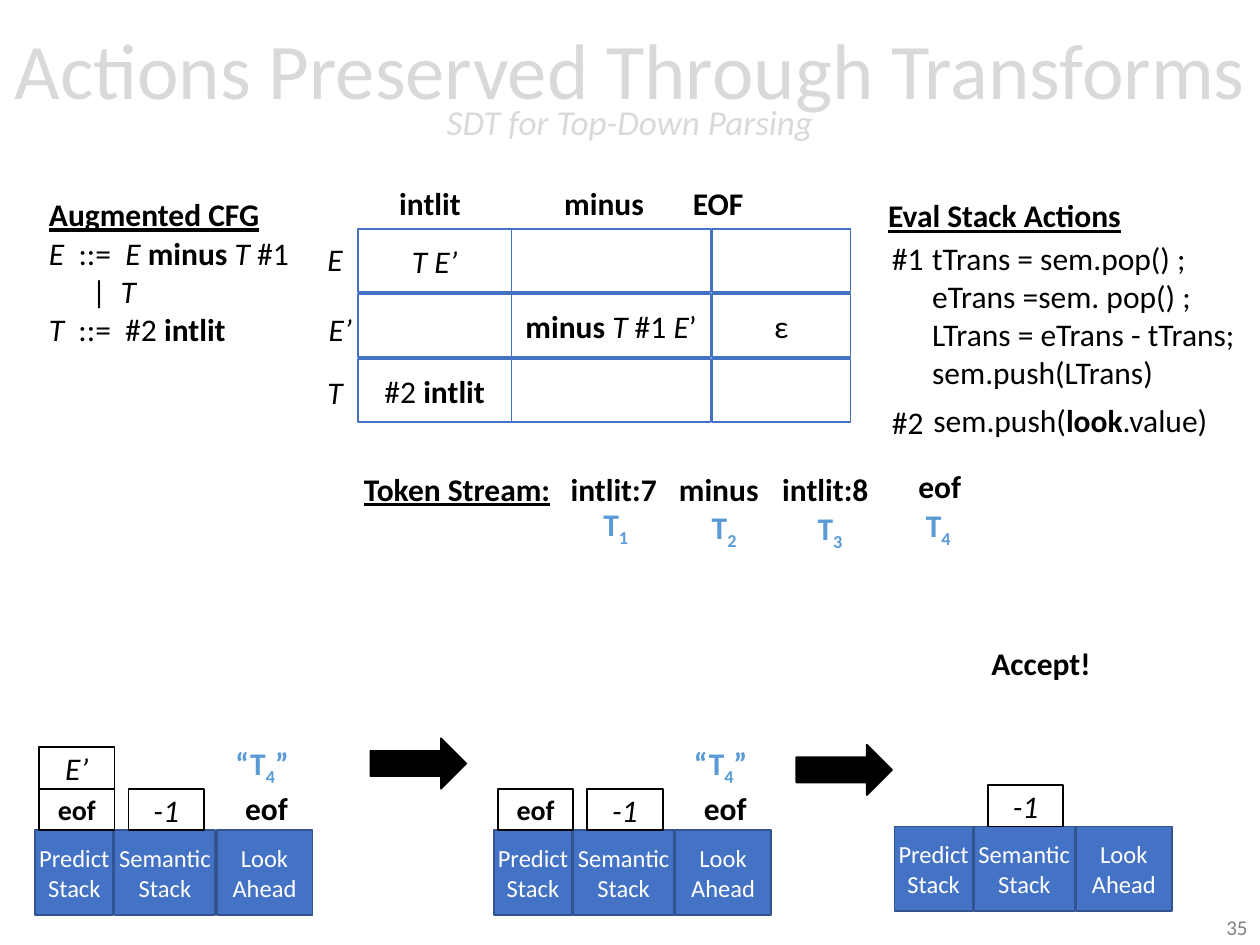
from pptx import Presentation
from pptx.dml.color import RGBColor
from pptx.enum import shapes, text
from pptx.util import Inches, Pt

THEME = {
    "font": "Calibri", "body": 18, "title": 45, "subtitle": 20,
    "label": 14, "small": 16, "number": 12,
    "black": "000000", "white": "FFFFFF", "muted": "D9D9D9", "gray": "808080",
    "token": "5B9BD5", "blue": "4472C4", "edge": "325491",
}

# Content: a line is a list of (text, style) runs; b bold, i italic, u underline, s subscript
TITLE = ("Actions Preserved Through Transforms", "SDT for Top-Down Parsing")
CFG = [
    [("E  ", "i"), ("::=  ", ""), ("E ", "i"), ("minus", "b"), (" T ", "i"), ("#1", "")],
    [("|  ", ""), ("T", "i")],
    [("T", "i"), ("  ::=  #2 ", ""), ("intlit", "b")],
]
COLUMNS = [("intlit", 3.07, 0.69), ("minus", 4.38, 0.84), ("EOF", 5.4, 0.61)]
ROWS = [("E", 2.5, 1.86, 0.32), ("E’", 2.51, 2.41, 0.39), ("T", 2.5, 2.91, 0.32)]
CELLS = [
    [[("T E’", "i")], None, None],
    [None, [("minus ", "b"), ("T", "i"), (" #1 ", ""), ("E", "i"), ("’", "")], [("ε", "")]],
    [[("#2 ", ""), ("intlit", "b")], None, None],
]
ACTIONS = ["tTrans = sem.pop() ;", "eTrans =sem. pop() ;",
           "LTrans = eTrans - tTrans;", "sem.push(LTrans)"]
HEADINGS = [("Augmented CFG", 0.29, 1.5, 1.88), ("Eval Stack Actions", 6.95, 1.51, 2.07),
            ("Token Stream:", 2.79, 3.68, 1.69)]
# token, left, top, width, label left, label top
TOKENS = [("intlit:7", 4.43, 3.68, 0.89, 4.69, 3.96), ("minus", 5.29, 3.68, 0.84, 5.55, 3.98),
          ("intlit:8", 6.11, 3.68, 0.89, 6.39, 3.99), ("eof", 7.19, 3.66, 0.54, 7.25, 3.97)]
# left, top of the labels, predict stack from the bottom up, has lookahead
STATES = [(0.28, 6.59, ["eof", "E’"], True), (3.92, 6.59, ["eof"], True),
          (7.1, 6.56, [], False)]
# label, offset from the left, width
STACKS = [("Predict\vStack", 0, 0.62), ("Semantic\vStack", 0.63, 0.8), ("Look\vAhead", 1.44, 0.76)]
ARROWS = [(2.94, 5.86), (6.32, 5.91)]

COL_X, COL_W = [2.84, 4.06, 5.65], [1.22, 1.58, 1.1]
ROW_Y, ROW_STEP, ROW_H = 1.82, 0.515, 0.5
SLOT_W, SLOT_H, STACK_H, TEXT_H = 0.6, 0.33, 0.67, 0.4
CENTER = text.PP_ALIGN.CENTER


def rgb(name):
    return RGBColor.from_string(THEME[name])


def style_font(font, size, color):
    font.name, font.size = THEME["font"], Pt(THEME[size])
    font.color.rgb = rgb(color)


def write(tf, lines, size="body", color="black", align=None):
    for n, line in enumerate(lines):
        p = tf.paragraphs[0] if n == 0 else tf.add_paragraph()
        p.alignment = align
        style_font(p.font, size, color)
        for words, style in line:
            for k, part in enumerate(words.split("\v")):
                if k:
                    p.add_line_break()
                r = p.add_run()
                r.text = part
                style_font(r.font, size, color)
                r.font.bold, r.font.italic = "b" in style, "i" in style
                if "u" in style:
                    r.font.underline = True
                if "s" in style:
                    r._r.get_or_add_rPr().set("baseline", "-25000")


def add_text(s, x, y, w, lines, h=TEXT_H, wrap=False, **look):
    tf = s.shapes.add_textbox(Inches(x), Inches(y), Inches(w), Inches(h)).text_frame
    tf.word_wrap = wrap
    write(tf, lines, **look)
    return tf


def add_box(s, x, y, w, h, line=None, fill="white", edge="black", kind="RECTANGLE", **look):
    sp = s.shapes.add_shape(shapes.MSO_SHAPE[kind], Inches(x), Inches(y), Inches(w), Inches(h))
    sp.shadow.inherit = False
    sp.fill.solid()
    sp.fill.fore_color.rgb = rgb(fill)
    sp.line.color.rgb = rgb(edge)
    sp.line.width = Pt(1)
    if line:
        tf = sp.text_frame
        tf.margin_left = tf.margin_right = 0
        tf.vertical_anchor = text.MSO_ANCHOR.MIDDLE
        write(tf, [line], align=CENTER, **look)


def add_title(s):
    sp = s.shapes.title
    sp.left, sp.top, sp.width, sp.height = Inches(0), Inches(0.02), Inches(10), Inches(1.45)
    tf = sp.text_frame
    tf.auto_size = text.MSO_AUTO_SIZE.NONE
    tf.margin_left = tf.margin_right = 0
    tf.vertical_anchor = text.MSO_ANCHOR.MIDDLE
    p = tf.paragraphs[0]
    p.alignment, p.line_spacing = CENTER, 0.7
    for n, (words, size) in enumerate(zip(TITLE, ("title", "subtitle"))):
        if n:
            p.add_line_break()
        r = p.add_run()
        r.text = words
        style_font(r.font, size, "muted")
        r.font.italic = size == "subtitle"


def add_state(s, x, y, predict, lookahead):
    for label, dx, w in STACKS:
        add_box(s, x + dx, y, w, STACK_H, [(label, "")], "blue", "edge",
                size="label", color="white")
    for n, symbol in enumerate(predict, 1):
        is_eof = symbol == "eof"
        add_box(s, x + 0.03, y - n * SLOT_H, SLOT_W, SLOT_H,
                [(symbol, "b" if is_eof else "i")], size="small" if is_eof else "body")
    add_box(s, x + 0.74, y - SLOT_H, SLOT_W, SLOT_H, [("-1", "i")])
    if lookahead:
        add_text(s, x + 1.38, y - 0.38, 0.91, [[("eof", "b")]], wrap=True, align=CENTER)
        add_text(s, x + 1.49, y - 0.73, 0.64, [[("“T", "b"), ("4", "bs"), ("”", "b")]],
                 color="token")


def main():
    prs = Presentation()
    prs.slide_width, prs.slide_height = Inches(10), Inches(7.5)
    s = prs.slides.add_slide(prs.slide_layouts[5])
    add_title(s)
    add_text(s, 7.75, 7.21, 2.25, [[("35", "")]], h=0.28, wrap=True,
             size="number", color="gray", align=text.PP_ALIGN.RIGHT)

    # Headings and grammar
    for words, x, y, w in HEADINGS:
        add_text(s, x, y, w, [[(words, "bu")]])
    tf = add_text(s, 0.29, 1.81, 2.12, CFG, h=1.01)
    tf.paragraphs[1]._p.get_or_add_pPr().set("marL", str(Inches(0.34)))

    # Parse table
    for words, x, w in COLUMNS:
        add_text(s, x, 1.41, w, [[(words, "b")]])
    for words, x, y, w in ROWS:
        add_text(s, x, y, w, [[(words, "i")]])
    for n, row in enumerate(CELLS):
        for x, w, cell in zip(COL_X, COL_W, row):
            add_box(s, x, ROW_Y + n * ROW_STEP, w, ROW_H, cell, edge="blue")

    # Stack actions
    add_text(s, 6.98, 1.85, 0.46, [[("#1", "")]])
    add_text(s, 7.3, 1.85, 2.63, [[(a, "")] for a in ACTIONS], h=1.31)
    add_text(s, 6.98, 3.15, 0.46, [[("#2", "")]])
    add_text(s, 7.31, 3.13, 2.46, [[("sem.push(", ""), ("look", "b"), (".value)", "")]])

    # Token stream
    for n, (words, x, y, w, label_x, label_y) in enumerate(TOKENS, 1):
        add_text(s, x, y, w, [[(words, "b")]])
        add_text(s, label_x, label_y, 0.41, [[("T", "b"), (str(n), "bs")]], color="token")

    # Parser states
    for state in STATES:
        add_state(s, *state)
    for x, y in ARROWS:
        add_box(s, x, y, 0.76, 0.4, fill="black", kind="RIGHT_ARROW")
    add_text(s, 7.77, 5.06, 1, [[("Accept!", "b")]])

    prs.save("out.pptx")


if __name__ == "__main__":
    main()
